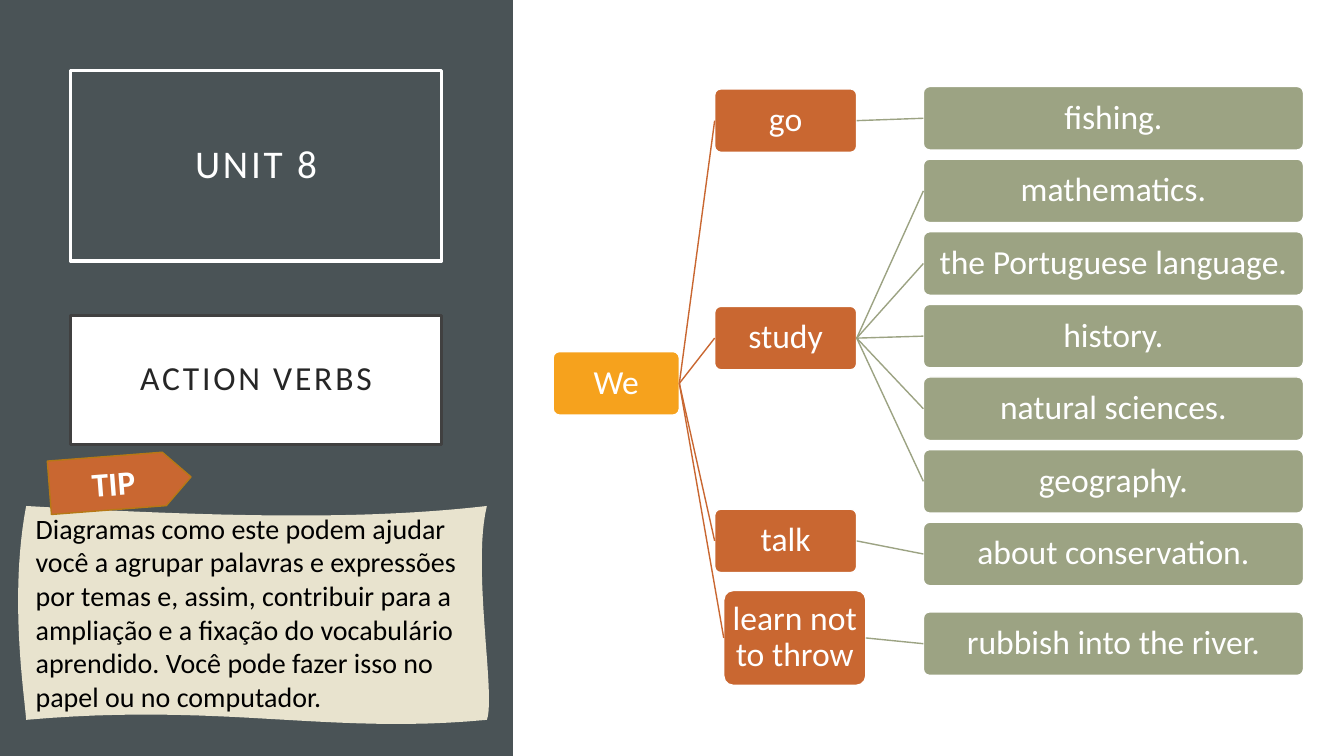
from pptx import Presentation
from pptx.dml.color import RGBColor as RGB
from pptx.enum.shapes import MSO_CONNECTOR as Link, MSO_SHAPE as Kind
from pptx.enum.text import MSO_ANCHOR as Anchor, MSO_AUTO_SIZE as Auto, PP_ALIGN as Align
from pptx.oxml.ns import qn
from pptx.util import Cm, Pt
from lxml.etree import SubElement

HUES = {
    "slate": "4A5356", "white": "FFFFFF", "black": "000000", "ink": "262626",
    "edge": "404040", "cream": "E8E3CE", "rust": "C96731", "gold": "F6A21D",
    "brown": "B67815", "sage": "9CA383",
}
UNIT = "UNIT 8"
TOPIC = "ACTION VERBS"
TIP = "TIP"
NOTE = (
    "Diagramas como este podem ajudar você a agrupar palavras e expressões "
    "por temas e, assim, contribuir para a ampliação e a fixação do "
    "vocabulário aprendido. Você pode fazer isso no papel ou no computador."
)
ROOT = ("We", (13.94, 8.86, 3.18, 1.6))
VERBS = [
    ("go", (18.01, 2.24, 3.58, 1.6), ["fishing."]),
    ("study", (18.01, 7.72, 3.58, 1.6),
     ["mathematics.", "the Portuguese language.", "history.",
      "natural sciences.", "geography."]),
    ("talk", (18.01, 12.83, 3.58, 1.6), ["about conservation."]),
    ("learn not to throw", (18.24, 14.88, 3.58, 2.39), ["rubbish into the river."]),
]
LEAF_X, LEAF_Y, LEAF_W, LEAF_H, STEP = 23.27, 2.18, 9.58, 1.6, 1.83
LAST_Y = 15.42
SCROLL = [
    [(0.66, 12.75), (6.32, 13.08), (9.58, 13.06), (12.27, 12.75)],
    [(12.27, 12.75), (11.89, 14.3), (12.5, 17.53), (12.27, 18.14)],
    [(12.27, 18.14), (8.26, 18.52), (5.61, 17.7), (0.66, 18.14)],
    [(0.66, 18.14), (0.61, 17.45), (0.23, 15.04), (0.66, 12.75)],
]

deck = Presentation()
deck.slide_width, deck.slide_height = Cm(33.87), Cm(19.05)
slide = deck.slides.add_slide(deck.slide_layouts[5])
shapes = slide.shapes


def hue(name):
    return RGB.from_string(HUES[name])


def paint(shape, fill, line=None, width=1):
    if fill:
        shape.fill.solid()
        shape.fill.fore_color.rgb = hue(fill)
    else:
        shape.fill.background()
    if line:
        shape.line.color.rgb = hue(line)
        shape.line.width = Pt(width)
    else:
        shape.line.fill.background()


def block(kind, place, fill, line=None, width=1):
    shape = shapes.add_shape(kind, *map(Cm, place))
    shape.shadow.inherit = False
    paint(shape, fill, line, width)
    return shape


def write(shape, text, size=24, color="white", bold=False, align=Align.CENTER,
          anchor=Anchor.MIDDLE, pads=(0.25, 0.13, 0.25, 0.13), lead=None, track=0):
    frame = shape.text_frame
    frame.word_wrap = True
    frame.auto_size = Auto.NONE
    frame.vertical_anchor = anchor
    (frame.margin_left, frame.margin_top,
     frame.margin_right, frame.margin_bottom) = map(Cm, pads)
    para = frame.paragraphs[0]
    para.alignment = align
    para.line_spacing = lead
    run = para.add_run()
    run.text = text
    font = run.font
    font.name, font.size, font.bold = "Calibri", Pt(size), bold
    font.color.rgb = hue(color)
    if track:
        font._element.set("spc", str(track * 100))


def node(text, place, fill):
    box = block(Kind.ROUNDED_RECTANGLE, place, fill, "white")
    box.adjustments[0] = 0.1
    write(box, text, pads=(0.1,) * 4, lead=0.9)
    return box


def join(start, end, color):
    line = shapes.add_connector(Link.STRAIGHT, 0, 0, 0, 0)
    line.begin_connect(start, 3)
    line.end_connect(end, 1)
    line.line.color.rgb = hue(color)
    line.line.width = Pt(1)
    SubElement(line._element.spPr, qn("a:effectLst"))


def curve(points, count=24):
    for i in range(1, count + 1):
        t = i / count
        parts = ((1 - t) ** 3, 3 * t * (1 - t) ** 2, 3 * t * t * (1 - t), t ** 3)
        yield tuple(Cm(sum(w * p[k] for w, p in zip(parts, points))) for k in (0, 1))


panel = block(Kind.RECTANGLE, (0, 0, 12.93, 19.05), "slate")
shapes._spTree.insert(2, panel._element)

title = shapes.title
title.left, title.top, title.width, title.height = map(Cm, (1.78, 1.78, 9.35, 4.8))
paint(title, None, "white", 2.5)
write(title, UNIT, size=28, pads=(0.5,) * 4, lead=0.9, track=2)

pen = shapes.build_freeform(*map(Cm, SCROLL[0][0]), scale=1.0)
pen.add_line_segments([dot for side in SCROLL for dot in curve(side)], close=True)
scroll = pen.convert_to_shape()
scroll.shadow.inherit = False
paint(scroll, "cream")
write(scroll, NOTE, size=20, color="black", align=Align.LEFT,
      anchor=Anchor.TOP, pads=(0.44, 0.13, 0.3, 0.13))

tag = block(Kind.PENTAGON, (1.24, 11.48, 3.58, 1.35), "rust", "brown")
tag.rotation = -4.4
write(tag, TIP, bold=True)

root = node(*ROOT, "gold")
leaves = [leaf for verb in VERBS for leaf in verb[2]]
tops = [LEAF_Y + STEP * i for i in range(len(leaves) - 1)] + [LAST_Y]
rows = iter(tops)
for name, place, ends in VERBS:
    verb = node(name, place, "rust")
    join(root, verb, "rust")
    for end in ends:
        leaf = node(end, (LEAF_X, next(rows), LEAF_W, LEAF_H), "sage")
        join(verb, leaf, "sage")

topic = block(Kind.RECTANGLE, (1.78, 7.95, 9.35, 3.25), "white", "edge", 2.5)
write(topic, TOPIC, color="ink", pads=(0.5,) * 4, lead=0.9, track=2)

deck.save("out.pptx")
